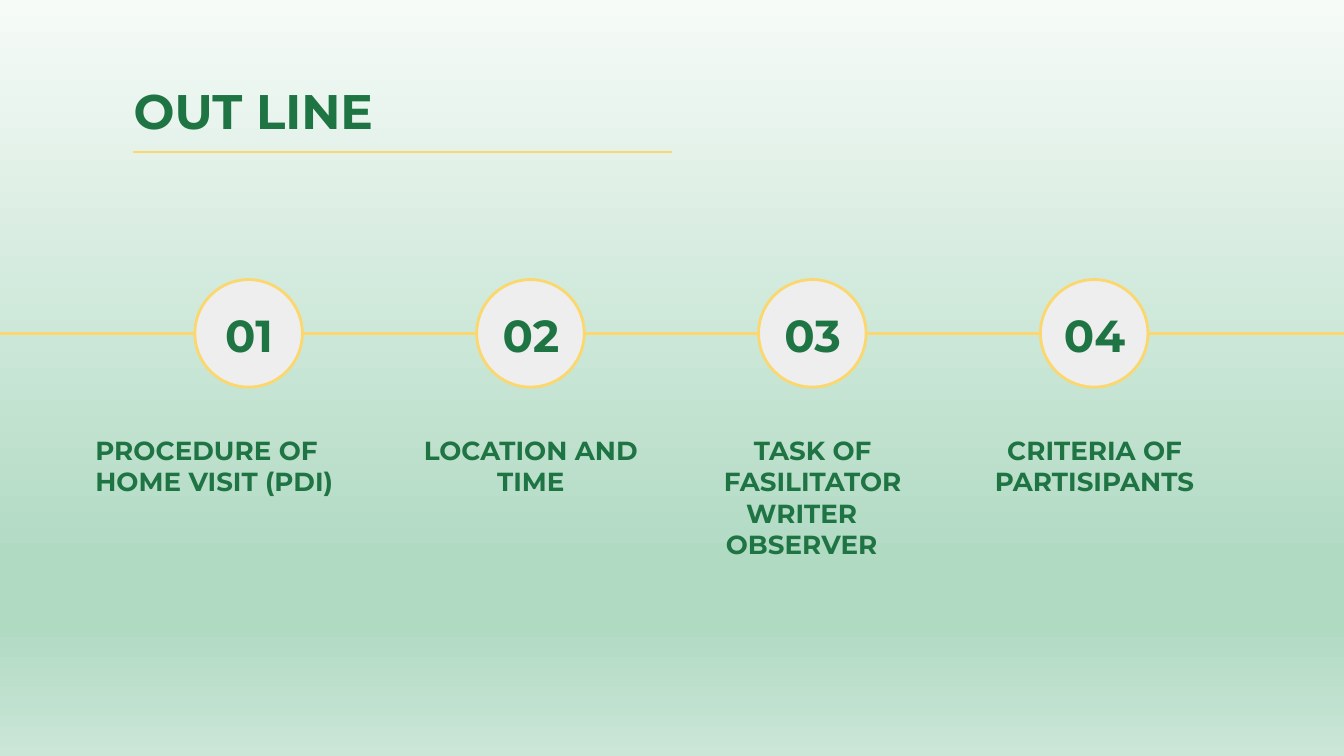
from lxml import etree
from pptx import Presentation
from pptx.dml.color import RGBColor
from pptx.enum.shapes import MSO_CONNECTOR, MSO_SHAPE
from pptx.enum.text import MSO_ANCHOR, MSO_AUTO_SIZE, PP_ALIGN
from pptx.oxml.ns import qn
from pptx.util import Pt

STRAIGHT = MSO_CONNECTOR.STRAIGHT
OVAL = MSO_SHAPE.OVAL
TOP, MIDDLE = MSO_ANCHOR.TOP, MSO_ANCHOR.MIDDLE
LEFT, CENTER = PP_ALIGN.LEFT, PP_ALIGN.CENTER
NO_AUTOFIT = MSO_AUTO_SIZE.NONE

STEP = 151
CIRCLE_LEFT, CIRCLE_TOP, CIRCLE_SIZE = 104.4, 149.8, 57.6
LABEL_LEFT, LABEL_WIDTH = 66.8, 133.2
CAPTION_TOP = 225.4
TRAILING_INDENT = 11.8


def color(value):
    return RGBColor.from_string(value)


class OutlineSlide:
    font = "Montserrat"
    green = "1F7444"
    yellow = "FBD76D"
    gray = "EEEEEE"
    line_width = 1.5
    inset = 7.2

    def __init__(self, page):
        self.page = page

    def background(self, stops):
        fill = self.page.background.fill
        fill.gradient()
        fill.gradient_angle = 270
        stop_list = self.page.element.find(".//" + qn("a:gsLst"))
        for stop in list(stop_list):
            stop_list.remove(stop)
        for position, value in stops:
            stop = etree.SubElement(stop_list, qn("a:gs"), pos=str(position * 1000))
            etree.SubElement(stop, qn("a:srgbClr"), val=value)

    def line(self, left, right, y):
        line = self.page.shapes.add_connector(STRAIGHT, Pt(left), Pt(y), Pt(right), Pt(y))
        line.line.color.rgb = color(self.yellow)
        line.line.width = Pt(self.line_width)
        etree.SubElement(line._element.spPr, qn("a:effectLst"))

    def circle(self, left, top, size):
        circle = self.page.shapes.add_shape(OVAL, Pt(left), Pt(top), Pt(size), Pt(size))
        circle.shadow.inherit = False
        circle.fill.solid()
        circle.fill.fore_color.rgb = color(self.gray)
        circle.line.color.rgb = color(self.yellow)
        circle.line.width = Pt(self.line_width)

    def title(self, left, top, width, height, words):
        box = self.page.shapes.title
        box.left, box.top, box.width, box.height = Pt(left), Pt(top), Pt(width), Pt(height)
        self.fill_text(box, [(words, 0)], 26, LEFT, TOP)

    def text(self, left, top, width, height, lines, size, align=CENTER, anchor=TOP):
        box = self.page.shapes.add_textbox(Pt(left), Pt(top), Pt(width), Pt(height))
        self.fill_text(box, lines, size, align, anchor)

    def fill_text(self, box, lines, size, align, anchor):
        frame = box.text_frame
        frame.word_wrap = True
        frame.auto_size = NO_AUTOFIT
        frame.vertical_anchor = anchor
        frame.margin_left = frame.margin_right = Pt(self.inset)
        frame.margin_top = frame.margin_bottom = Pt(self.inset)
        for index, (words, right_indent) in enumerate(lines):
            para = frame.add_paragraph() if index else frame.paragraphs[0]
            para.alignment = align
            if right_indent:
                para._p.get_or_add_pPr().set("marR", str(int(Pt(right_indent))))
            span = para.add_run()
            span.text = words
            span.font.name = self.font
            span.font.size = Pt(size)
            span.font.bold = True
            span.font.color.rgb = color(self.green)


def main():
    deck = Presentation()
    deck.slide_width, deck.slide_height = Pt(720), Pt(405)
    slide = OutlineSlide(deck.slides.add_slide(deck.slide_layouts[5]))
    slide.background([(0, "F6FBF8"), (74, "B1DAC3"), (83, "B1DAC3"), (100, "CBE6D7")])
    slide.title(64.4, 36, 591, 45.4, "OUT LINE")
    slide.line(71.3, 360, 81.4)
    slide.line(0, 720, CIRCLE_TOP + CIRCLE_SIZE / 2)

    for index in range(4):
        offset = index * STEP
        slide.circle(CIRCLE_LEFT + offset, CIRCLE_TOP, CIRCLE_SIZE)
        slide.text(LABEL_LEFT + offset, 159.2, LABEL_WIDTH, 39.6,
                   [(f"{index + 1:02}", 0)], 24, anchor=MIDDLE)

    slide.text(44, CAPTION_TOP, 173.5, 71.3,
               [("PROCEDURE OF HOME VISIT (PDI)", 0)], 14, align=LEFT)
    captions = [
        (45.4, [("LOCATION AND TIME", 0)]),
        (90, [("TASK OF", 0), ("FASILITATOR", 0),
              ("WRITER", TRAILING_INDENT), ("OBSERVER", TRAILING_INDENT)]),
        (45.4, [("CRITERIA OF PARTISIPANTS", 0)]),
    ]
    for index, (height, lines) in enumerate(captions, 1):
        slide.text(LABEL_LEFT + index * STEP, CAPTION_TOP, LABEL_WIDTH, height, lines, 14)

    deck.save("out.pptx")


if __name__ == "__main__":
    main()
